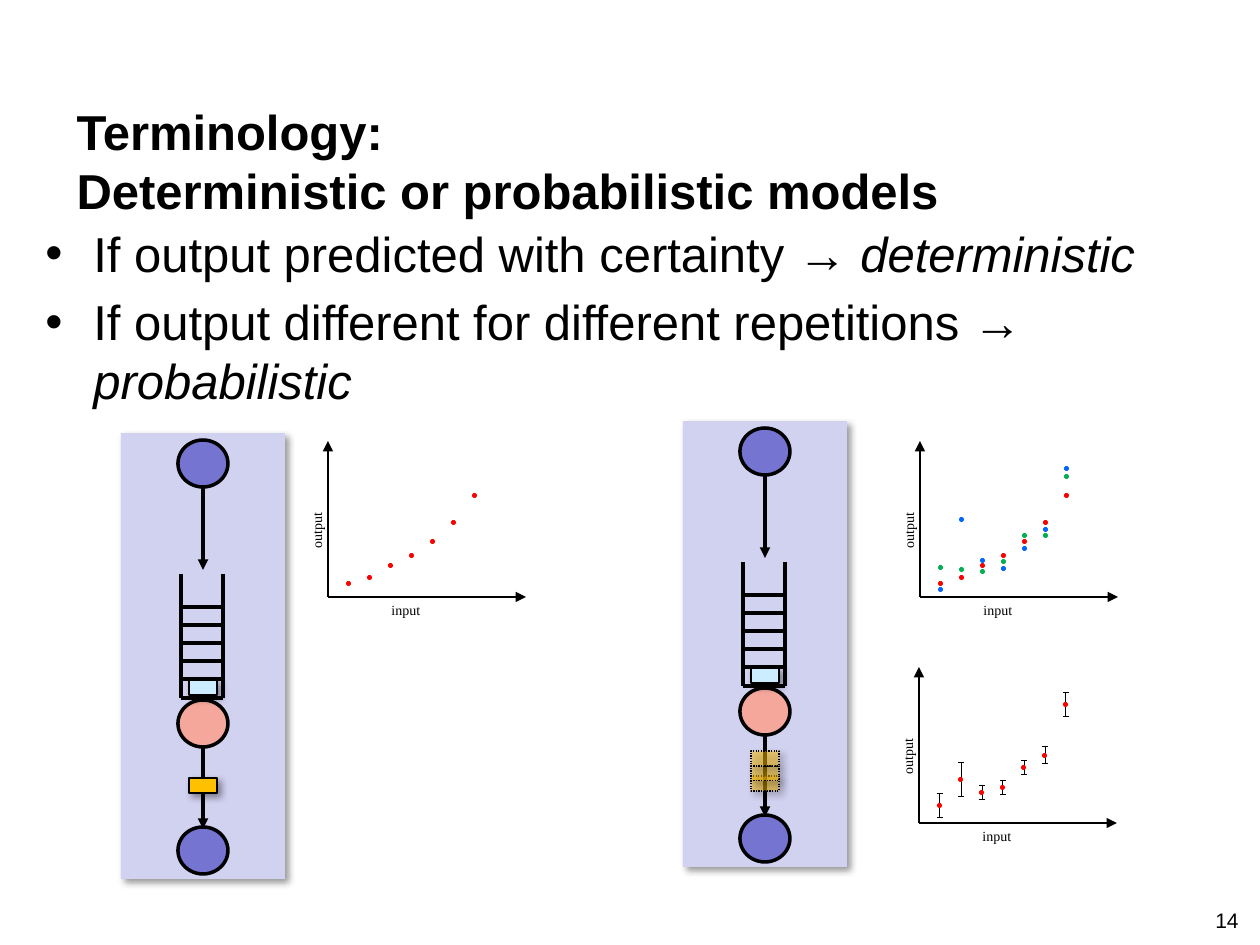
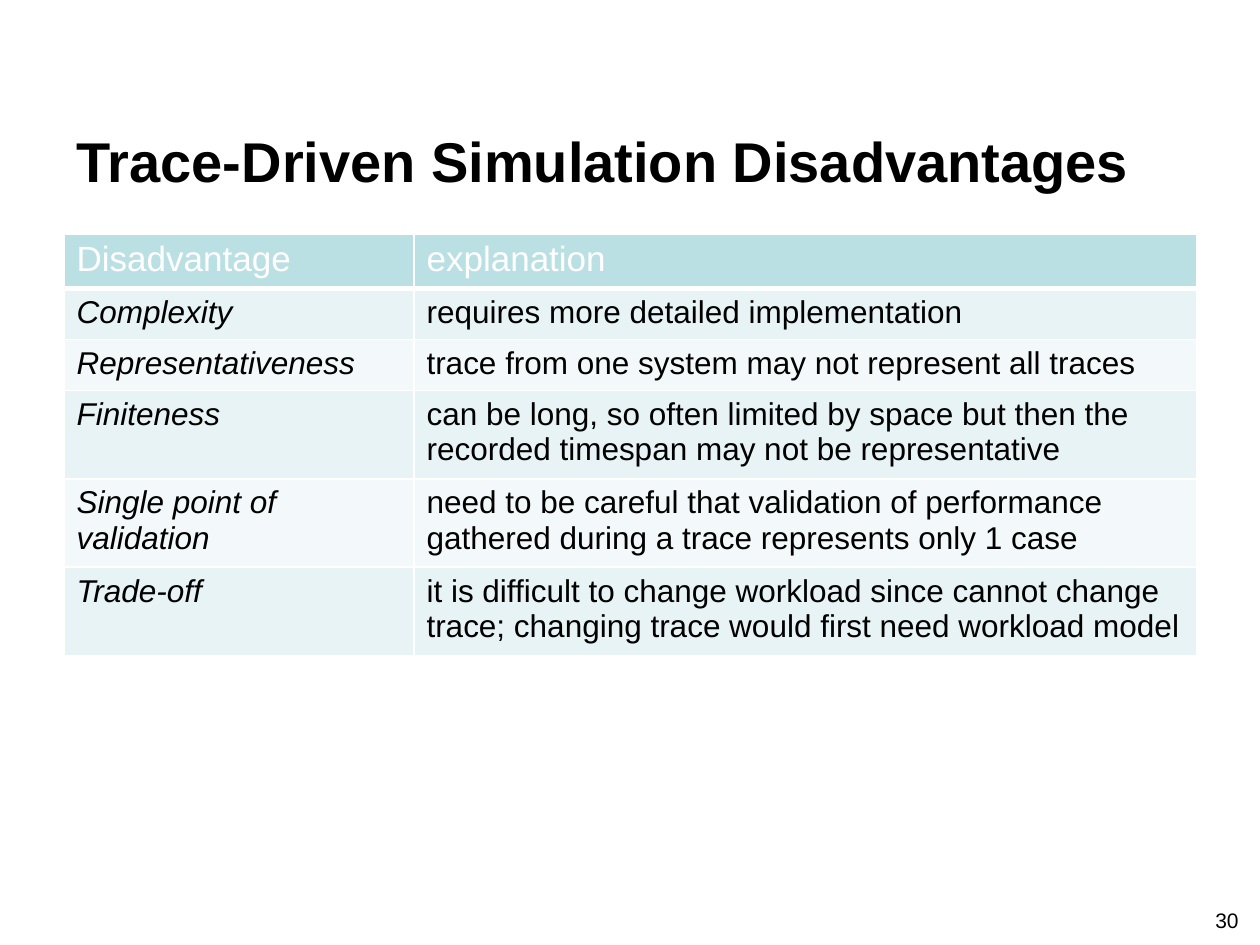
import pptx
import pptx.dml.color
import pptx.enum.dml
import pptx.enum.shapes
import pptx.enum.text
import pptx.oxml
import pptx.oxml.ns
import pptx.util

PX = 7257  # EMU in one px, 126 px to the inch
RGB = pptx.dml.color.RGBColor
BLACK = RGB(0x00, 0x00, 0x00)
WHITE = RGB(0xFF, 0xFF, 0xFF)
LAVENDER = RGB(0xD1, 0xD1, 0xF0)
VIOLET = RGB(0x75, 0x75, 0xD1)
SALMON = RGB(0xF6, 0xA7, 0x9C)
PALE_BLUE = RGB(0xCC, 0xEC, 0xFF)
AMBER = RGB(0xFF, 0xC0, 0x00)
RED = RGB(0xFF, 0x00, 0x00)
GREEN = RGB(0x00, 0xB0, 0x50)
BLUE = RGB(0x00, 0x66, 0xFF)
TEAL = RGB(0xBB, 0xE0, 0xE3)
TEAL_BANDS = [RGB(0xF3, 0xF9, 0xFA), RGB(0xE7, 0xF3, 0xF4)]

RECT = pptx.enum.shapes.MSO_SHAPE.RECTANGLE
OVAL = pptx.enum.shapes.MSO_SHAPE.OVAL
STRAIGHT = pptx.enum.shapes.MSO_CONNECTOR.STRAIGHT
NS = pptx.oxml.ns.nsdecls("a")
qn = pptx.oxml.ns.qn
SHADOW = (f'<a:outerShdw {NS} blurRad="50800" dist="38100" dir="2700000" algn="tl">'
          '<a:srgbClr val="000000"><a:alpha val="40000"/></a:srgbClr></a:outerShdw>')


def write(para, text, size=28, color=BLACK, font="Arial", bold=False, italic=False):
    for number, line in enumerate(text.split("\n")):
        if number:
            para.add_line_break()
        span = para.add_run()
        span.text = line
        span.font.name = font
        span.font.size = pptx.util.Pt(size)
        span.font.color.rgb = color
        span.font.bold = bold
        span.font.italic = italic


def add_line(shapes, x1, y1, x2, y2, width, arrow=False):
    line = shapes.add_connector(STRAIGHT, x1 * PX, y1 * PX, x2 * PX, y2 * PX)
    line.line.color.rgb = BLACK
    line.line.width = pptx.util.Pt(width)
    if arrow:
        line.line._get_or_add_ln().append(
            pptx.oxml.parse_xml(f'<a:tailEnd {NS} type="triangle"/>'))
    line._element.spPr.append(pptx.oxml.parse_xml(f"<a:effectLst {NS}/>"))


deck = pptx.Presentation()
deck.slide_width = pptx.util.Inches(10)
deck.slide_height = pptx.util.Inches(7.5)

# Titles and page numbers of both slides
pages = []
for heading, size, number in [
    ("Terminology:\nDeterministic or probabilistic models", 28, "14"),
    ("Trace-Driven Simulation Disadvantages", 32, "30"),
]:
    page = deck.slides.add_slide(deck.slide_layouts[5])
    title = page.shapes.title
    title.left, title.top, title.width, title.height = 64 * PX, 116 * PX, 1133 * PX, 89 * PX
    title.text_frame.auto_size = pptx.enum.text.MSO_AUTO_SIZE.NONE
    title.text_frame.vertical_anchor = pptx.enum.text.MSO_ANCHOR.MIDDLE
    para = title.text_frame.paragraphs[0]
    para.alignment = pptx.enum.text.PP_ALIGN.LEFT
    write(para, heading, size=size, bold=True)
    box = page.shapes.add_textbox(1203 * PX, 901 * PX, 52 * PX, 38 * PX)
    box.text_frame.word_wrap = False
    write(box.text_frame.paragraphs[0], number, size=12)
    pages.append(page)
models_page, trace_page = pages

# Slide 1: definitions
box = models_page.shapes.add_textbox(33 * PX, 217 * PX, 1203 * PX, 218 * PX)
box.text_frame.word_wrap = True
for number, (condition, term) in enumerate([
    ("If output predicted with certainty → ", "deterministic"),
    ("If output different for different repetitions → ", "probabilistic"),
]):
    para = box.text_frame.add_paragraph() if number else box.text_frame.paragraphs[0]
    properties = para._p.get_or_add_pPr()
    properties.set("marL", str(48 * PX))
    properties.set("indent", str(-48 * PX))
    properties.append(pptx.oxml.parse_xml(f'<a:buFont {NS} typeface="Arial"/>'))
    properties.append(pptx.oxml.parse_xml(f'<a:buChar {NS} char="•"/>'))
    if number:
        para.space_before = pptx.util.Pt(5.6)
    write(para, condition)
    write(para, term, italic=True)

# Slide 1: queue models; finished jobs are given by their tops in the panel
for left, top, job_tops, ghost in [
    (683, 421, [355, 345, 330], True),
    (121, 433, [345], False),
]:
    shapes = models_page.shapes.add_group_shape().shapes
    # kind, x, y, width, height, fill, line width, shadow, ghost
    blocks = [
        (RECT, 0, 0, 164, 446, LAVENDER, 0, True, False),
        (OVAL, 57, 267, 50, 47, SALMON, 2, False, False),
        (OVAL, 57, 7, 50, 47, VIOLET, 2, False, False),
        (OVAL, 57, 394, 50, 47, VIOLET, 2, False, False),
        (RECT, 68, 247, 28, 15, PALE_BLUE, 0.75, True, False),
    ]
    blocks += [(RECT, 68, y, 28, 15, AMBER, 0.75, True, ghost) for y in job_tops]
    # x1, y1, x2, y2, arrow: rails, rungs, then flow
    lines = [(x, 141, x, 265, False) for x in (60, 102)]
    lines += [(60, y, 102, y, False) for y in [174 + 18 * step for step in range(5)] + [265]]
    lines += [(82, 54, 82, 137, True), (82, 313, 82, 396, True)]

    for index, (kind, x, y, width, height, fill, line, shadow, faded) in enumerate(blocks):
        block = shapes.add_shape(kind, (left + x) * PX, (top + y) * PX, width * PX, height * PX)
        block.shadow.inherit = False
        block.fill.solid()
        block.fill.fore_color.rgb = fill
        properties = block._element.spPr
        if line:
            block.line.color.rgb = BLACK
            block.line.width = pptx.util.Pt(line)
        else:
            block.line.fill.background()
        if faded:
            block.line.dash_style = pptx.enum.dml.MSO_LINE.ROUND_DOT
            properties.find(qn("a:solidFill"))[0].append(
                pptx.oxml.parse_xml(f'<a:alpha {NS} val="50000"/>'))
        if shadow:
            properties.find(qn("a:effectLst")).append(pptx.oxml.parse_xml(SHADOW))
        if index == 0:  # lines lie on the panel and under the other blocks
            for x1, y1, x2, y2, arrow in lines:
                add_line(shapes, left + x1, top + y1, left + x2, top + y2, 2, arrow)

# Slide 1: plots, as heights above the input axis
BASE_RUN = (RED, [14, 20, 32, 42, 56, 75, 102])
GREEN_RUN = (GREEN, [30, 28, 26, 36, 62, 62, 121])
BLUE_RUN = (BLUE, [8, 78, 37, 29, 49, 68, 129])
MEANS = (RED, [18, 44, 31, 36, 56, 68, 119])
SPREADS = [12, 17, 7, 7, 7, 9, 12]
STEP = 21

for origin_x, origin_y, runs, spreads in [
    (328, 597, [BASE_RUN], []),
    (920, 597, [BASE_RUN, GREEN_RUN, BLUE_RUN], []),
    (919, 823, [MEANS], SPREADS),
]:
    shapes = models_page.shapes.add_group_shape().shapes
    # Error bars
    for step, (mean, spread) in enumerate(zip(MEANS[1], spreads), start=1):
        x = origin_x + STEP * step
        low, high = origin_y - mean + spread, origin_y - mean - spread
        add_line(shapes, x, low, x, high, 0.5)
        for y in (low, high):
            add_line(shapes, x - 3, y, x + 3, y, 0.5)
    # Axes and their names
    add_line(shapes, origin_x, origin_y, origin_x, origin_y - 156, 1, True)
    add_line(shapes, origin_x, origin_y, origin_x + 198, origin_y, 1, True)
    for name, x, y, width, turn in [("output", -42, -82, 62, 270), ("input", 51, -2, 54, 0)]:
        box = shapes.add_textbox((origin_x + x) * PX, (origin_y + y) * PX, width * PX, 30 * PX)
        box.rotation = turn
        box.text_frame.word_wrap = False
        write(box.text_frame.paragraphs[0], name, size=8, font="Times New Roman")
    # Points
    for color, heights in runs:
        for step, height in enumerate(heights, start=1):
            dot = shapes.add_shape(OVAL, (origin_x + STEP * step - 3) * PX,
                                   (origin_y - height - 2) * PX, 5 * PX, 5 * PX)
            dot.shadow.inherit = False
            dot.fill.solid()
            dot.fill.fore_color.rgb = color
            dot.line.fill.background()

# Slide 2: table of disadvantages
rows = [
    ("Disadvantage", "explanation"),
    ("Complexity", "requires more detailed implementation"),
    ("Representativeness", "trace from one system may not represent all traces"),
    ("Finiteness", "can be long, so often limited by space but then the "
                   "recorded timespan may not be representative"),
    ("Single point of validation", "need to be careful that validation of performance "
                                   "gathered during a trace represents only 1 case"),
    ("Trade-off", "it is difficult to change workload since cannot change "
                  "trace; changing trace would first need workload model"),
]
table = trace_page.shapes.add_table(
    len(rows), 2, 64 * PX, 234 * PX, 1133 * PX, 51 * len(rows) * PX).table
table.columns[0].width = 350 * PX
table.columns[1].width = 783 * PX
for r, row in enumerate(rows):
    table.rows[r].height = 51 * PX
    for c, text in enumerate(row):
        cell = table.cell(r, c)
        for side in "LRTB":
            thick = (r, side) in [(0, "B"), (1, "T")]
            cell._tc.get_or_add_tcPr().append(pptx.oxml.parse_xml(
                f'<a:ln{side} {NS} w="{38100 if thick else 12700}"><a:solidFill>'
                f'<a:srgbClr val="{WHITE}"/></a:solidFill></a:ln{side}>'))
        cell.fill.solid()
        cell.fill.fore_color.rgb = TEAL_BANDS[r % 2] if r else TEAL
        write(cell.text_frame.paragraphs[0], text, size=18 if r else 20,
              color=BLACK if r else WHITE, italic=r > 0 and c == 0)

deck.save("out.pptx")
